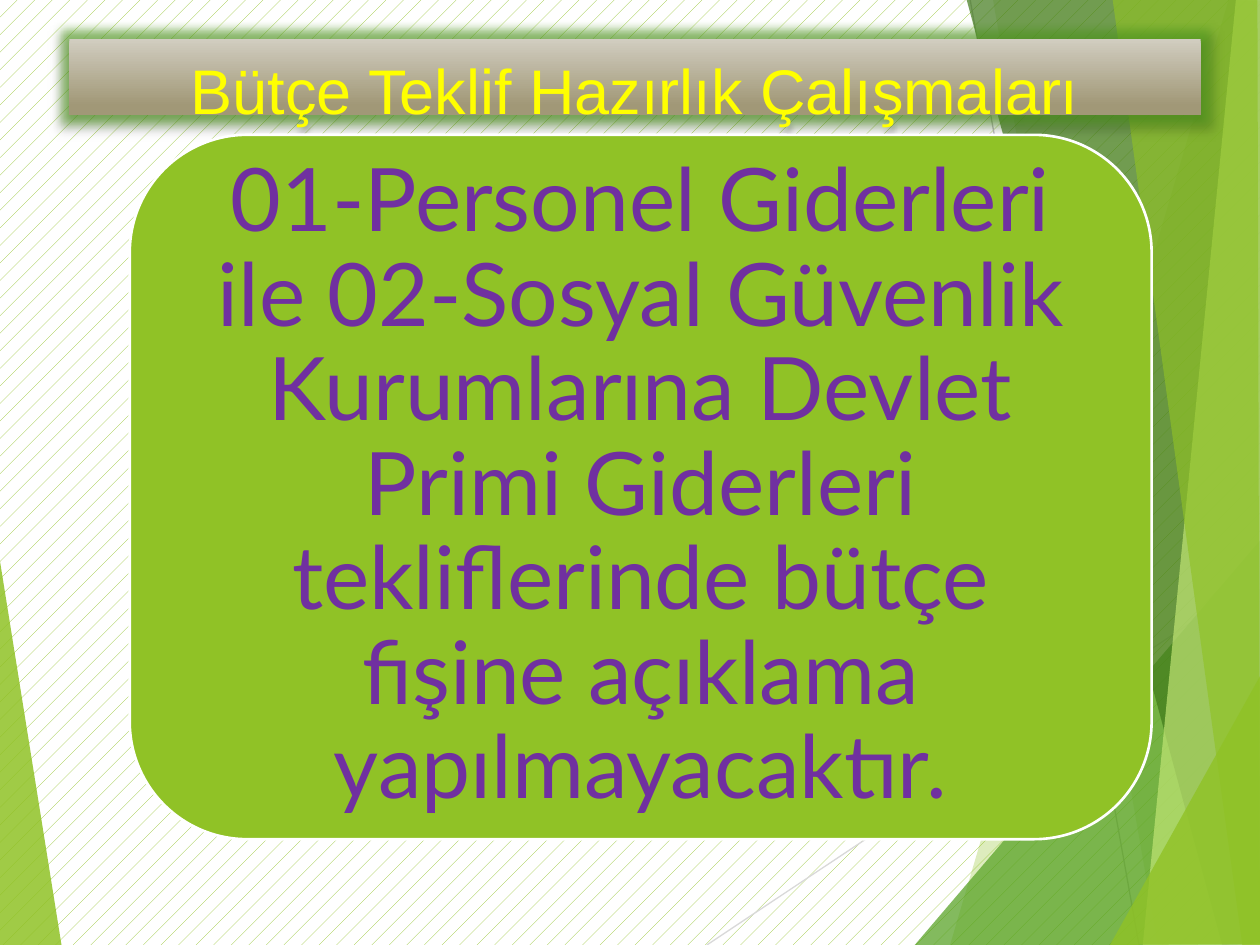
from dataclasses import dataclass

from lxml import etree
from pptx import Presentation
from pptx.dml.color import RGBColor
from pptx.enum.dml import MSO_PATTERN
from pptx.enum.shapes import MSO_CONNECTOR, MSO_SHAPE
from pptx.enum.text import MSO_ANCHOR, MSO_AUTO_SIZE, PP_ALIGN
from pptx.oxml import parse_xml
from pptx.oxml.ns import nsdecls, qn
from pptx.util import Inches, Pt

DOTS = MSO_PATTERN.PERCENT_5
STRAIGHT = MSO_CONNECTOR.STRAIGHT
ROUNDED = MSO_SHAPE.ROUNDED_RECTANGLE
TOP, MIDDLE = MSO_ANCHOR.TOP, MSO_ANCHOR.MIDDLE
NO_FIT = MSO_AUTO_SIZE.NONE
CENTER = PP_ALIGN.CENTER


@dataclass(frozen=True)
class Theme:
    lime: str = "90C226"
    green: str = "54A021"
    dark_green: str = "3F7819"
    pale_lime: str = "C0E474"
    white: str = "FFFFFF"
    title_text: str = "FFFF00"
    title_light: str = "D1CDC0"
    title_dark: str = "A19877"
    message_text: str = "7030A0"
    title_font: str = "Arial"
    message_font: str = "Lato"
    title_size: int = 36
    message_size: int = 50


THEME = Theme()

RAYS = [
    ((5.61, 7.5), (10.01, 4.57), "D9D9D9"),
    ((7.7, 0), (9.04, 7.5), "BFBFBF"),
]
LEFT_FACET = ([(-0.01, 4.39), (0.49, 7.51), (-0.01, 7.5)], THEME.lime, 85)
RIGHT_FACETS = [
    ([(9.75, 0), (7.54, 7.5), (10.02, 7.51), (10.01, 0.01)], THEME.lime, 30),
    ([(7.88, -0.01), (9.19, 7.5), (10.01, 7.5), (10.01, -0.01)], THEME.lime, 20),
    ([(7.26, 7.5), (10, 4.29), (10.01, 7.5)], THEME.green, 72),
    ([(7.67, -0.01), (9.7, 7.5), (10.01, 7.49), (10.01, -0.01)], THEME.dark_green, 70),
    ([(9.81, -0.01), (9.07, 7.5), (10.01, 7.5), (10, -0.01)], THEME.pale_lime, 70),
    ([(8.83, -0.01), (9.86, 7.5), (10, 7.5), (9.98, -0.01)], THEME.lime, 65),
    ([(8.81, 7.5), (10.01, 5.35), (10.01, 7.49)], THEME.lime, 80),
]


def rgb(color):
    return RGBColor.from_string(color)


def apply(target, values):
    for name, value in values.items():
        setattr(target, name, value)


def paint_background(slide):
    fill = slide.background.fill
    fill.patterned()
    fill.pattern = DOTS
    fill.fore_color.rgb = rgb(THEME.lime)
    fill.back_color.rgb = rgb(THEME.white)


def add_facet(slide, corners, color, opacity):
    points = [(Inches(x), Inches(y)) for x, y in corners]
    builder = slide.shapes.build_freeform(*points[0], scale=1.0)
    builder.add_line_segments(points[1:], close=True)
    facet = builder.convert_to_shape()
    facet.shadow.inherit = False
    facet.fill.solid()
    facet.fill.fore_color.rgb = rgb(color)
    facet.line.fill.background()
    color_node = facet._element.spPr.find(qn("a:solidFill"))[0]
    etree.SubElement(color_node, qn("a:alpha"), val=str(opacity * 1000))


def add_ray(slide, start, end, color):
    ray = slide.shapes.add_connector(STRAIGHT, *map(Inches, start + end))
    ray.line.color.rgb = rgb(color)
    ray.line.width = Pt(0.75)
    etree.SubElement(ray._element.spPr, qn("a:effectLst"))


def write_text(shape, text, font, size, color, frame_format):
    frame = shape.text_frame
    apply(frame, {"word_wrap": True, "auto_size": NO_FIT, **frame_format})
    paragraph = frame.paragraphs[0]
    paragraph.alignment = CENTER
    run = paragraph.add_run()
    run.text = text
    apply(run.font, {"name": font, "size": Pt(size)})
    run.font.color.rgb = rgb(color)
    return paragraph


def add_glow_and_shadow(shape):
    shape._element.spPr.append(parse_xml(
        f'<a:effectLst {nsdecls("a")}>'
        f'<a:glow rad="{Pt(11)}"><a:srgbClr val="{THEME.green}">'
        '<a:alpha val="60000"/></a:srgbClr></a:glow>'
        f'<a:outerShdw blurRad="{Pt(3.5)}" dist="{Pt(2.2)}" dir="5400000" rotWithShape="0">'
        '<a:srgbClr val="000000"><a:alpha val="32000"/></a:srgbClr></a:outerShdw>'
        '</a:effectLst>'))


def format_title(slide, text):
    title = slide.shapes.title
    apply(title, {"left": Inches(0.55), "top": Inches(0.31),
                  "width": Inches(8.98), "height": Inches(0.6)})
    title.fill.gradient()
    title.fill.gradient_angle = 270
    bands = [(0, THEME.title_light), (0.88, THEME.title_dark)]
    for stop, (position, color) in zip(title.fill.gradient_stops, bands):
        stop.position = position
        stop.color.rgb = rgb(color)
    add_glow_and_shadow(title)
    write_text(title, text, THEME.title_font, THEME.title_size, THEME.title_text,
               {"vertical_anchor": TOP, "margin_top": Inches(0.1)})
    slide.shapes._spTree.append(title._element)


def add_message(slide, text):
    panel = slide.shapes.add_shape(
        ROUNDED, Inches(1.03), Inches(1.07), Inches(8.11), Inches(5.59))
    panel.shadow.inherit = False
    panel.fill.solid()
    panel.fill.fore_color.rgb = rgb(THEME.lime)
    panel.line.color.rgb = rgb(THEME.white)
    panel.line.width = Pt(1.5)
    side, edge = Inches(0.21), Inches(0.1)
    paragraph = write_text(
        panel, text, THEME.message_font, THEME.message_size, THEME.message_text,
        {"vertical_anchor": MIDDLE, "margin_left": side, "margin_right": side,
         "margin_top": edge, "margin_bottom": edge})
    paragraph.line_spacing = 0.9


def main():
    deck = Presentation()
    apply(deck, {"slide_width": Inches(10), "slide_height": Inches(7.5)})
    slide = deck.slides.add_slide(deck.slide_layouts[5])
    paint_background(slide)
    add_facet(slide, *LEFT_FACET)
    for ray in RAYS:
        add_ray(slide, *ray)
    for facet in RIGHT_FACETS:
        add_facet(slide, *facet)
    format_title(slide, "Bütçe Teklif Hazırlık Çalışmaları")
    add_message(slide, "01-Personel Giderleri ile 02-Sosyal Güvenlik Kurumlarına "
                       "Devlet Primi Giderleri tekliflerinde bütçe fişine açıklama "
                       "yapılmayacaktır.")
    deck.save("out.pptx")


if __name__ == "__main__":
    main()
